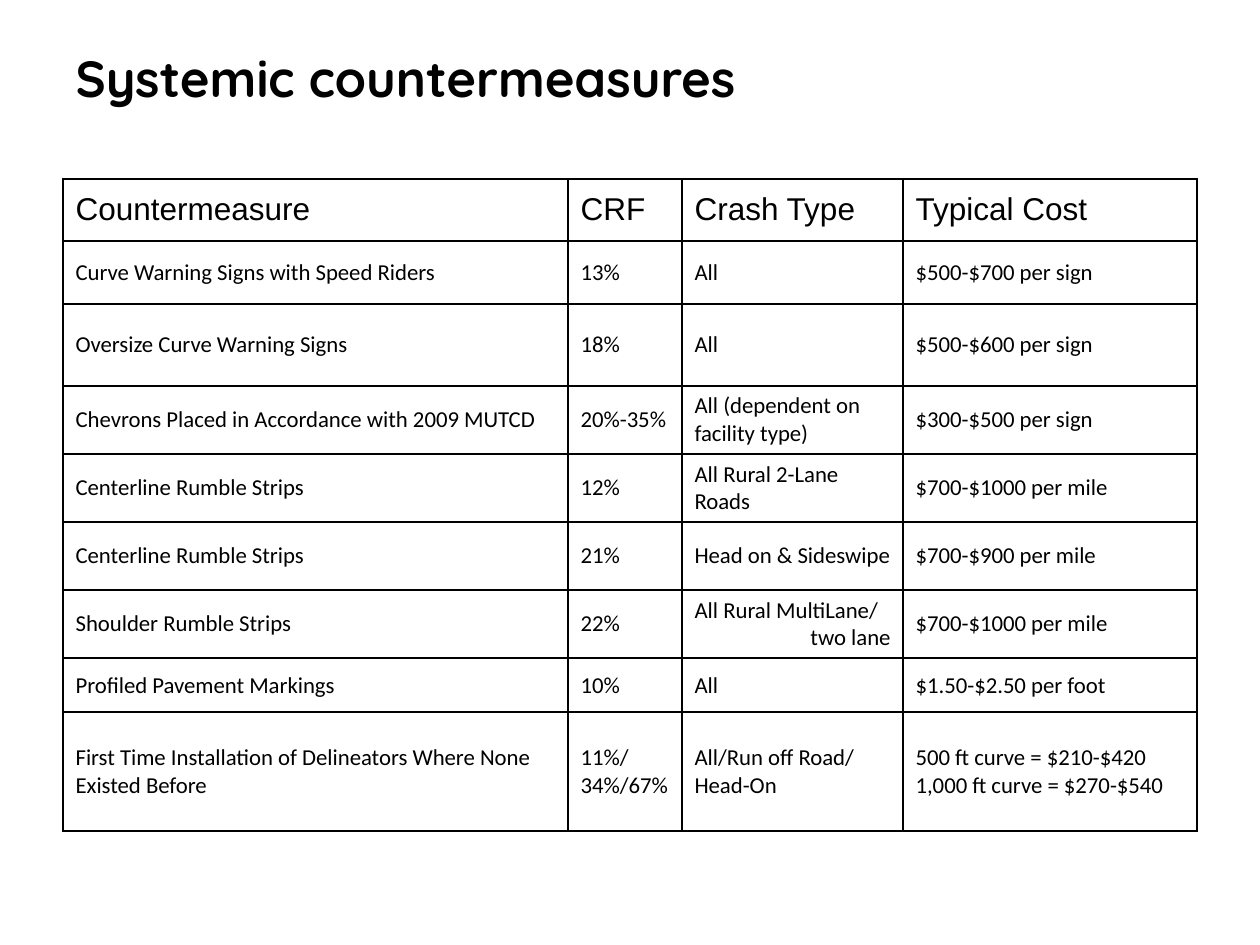
import lxml.etree
import pptx
import pptx.dml.color
import pptx.enum.text
import pptx.oxml.ns
import pptx.util

PIXELS_PER_INCH = 126
BLACK = pptx.dml.color.RGBColor(0, 0, 0)
ANCHOR_MIDDLE = pptx.enum.text.MSO_ANCHOR.MIDDLE
ALIGN = pptx.enum.text.PP_ALIGN

TITLE_FORMAT = {"name": "Quicksand", "size": pptx.util.Pt(29), "bold": True}
HEADER_FORMAT = {"name": "Arial", "size": pptx.util.Pt(18), "bold": False}
BODY_FORMAT = {"name": "Calibri", "size": pptx.util.Pt(13), "bold": False}

TITLE_BOX = (63, 38, 1134, 78)
TABLE_BOX = (63, 179, 1134, 652)
COLUMN_WIDTHS = (505, 114, 221, 294)
ROW_HEIGHTS = (62, 63, 82, 68, 68, 68, 68, 54, 119)
SPLIT_CELL = (6, 2)

COUNTERMEASURES = (
    ("Countermeasure", "CRF", "Crash Type", "Typical Cost"),
    ("Curve Warning Signs with Speed Riders", "13%", "All", "$500-$700 per sign"),
    ("Oversize Curve Warning Signs", "18%", "All", "$500-$600 per sign"),
    ("Chevrons Placed in Accordance with 2009 MUTCD", "20%-35%",
     "All (dependent on facility type)", "$300-$500 per sign"),
    ("Centerline Rumble Strips", "12%", "All Rural 2-Lane Roads", "$700-$1000 per mile"),
    ("Centerline Rumble Strips", "21%", "Head on & Sideswipe", "$700-$900 per mile"),
    ("Shoulder Rumble Strips", "22%", "All Rural MultiLane/\ntwo lane", "$700-$1000 per mile"),
    ("Profiled Pavement Markings", "10%", "All", "$1.50-$2.50 per foot"),
    ("First Time Installation of Delineators Where None Existed Before", "11%/34%/67%",
     "All/Run off Road/ Head-On", "500 ft curve = $210-$420\n1,000 ft curve = $270-$540"),
)


def px(length):
    """Turn a length in pixels into EMU."""
    return pptx.util.Emu(round(length * 914400 / PIXELS_PER_INCH))


def format_text(text_frame, font_format):
    """Apply left alignment, black colour and font values to every paragraph."""
    for paragraph in text_frame.paragraphs:
        paragraph.alignment = ALIGN.LEFT
        for name, value in font_format.items():
            setattr(paragraph.font, name, value)
        paragraph.font.color.rgb = BLACK


def add_borders(cell):
    """Draw a one-point black line on each side of a cell."""
    properties = cell._tc.get_or_add_tcPr()
    for index, side in enumerate(("lnL", "lnR", "lnT", "lnB")):
        line = lxml.etree.Element(
            pptx.oxml.ns.qn(f"a:{side}"), w=str(pptx.util.Pt(1)))
        fill = lxml.etree.SubElement(line, pptx.oxml.ns.qn("a:solidFill"))
        lxml.etree.SubElement(fill, pptx.oxml.ns.qn("a:srgbClr"), val=str(BLACK))
        properties.insert(index, line)


def place_title(slide, box):
    """Fill the title placeholder within the box."""
    title = slide.shapes.title
    title.left, title.top, title.width, title.height = map(px, box)
    title.text_frame.text = "Systemic countermeasures"
    title.text_frame.vertical_anchor = ANCHOR_MIDDLE
    format_text(title.text_frame, TITLE_FORMAT)


def place_table(slide, box):
    """Build the countermeasure table within the box."""
    table = slide.shapes.add_table(
        len(ROW_HEIGHTS), len(COLUMN_WIDTHS), *map(px, box)).table
    table.first_row = table.horz_banding = False
    for column, width in zip(table.columns, COLUMN_WIDTHS):
        column.width = px(width)
    for row_index, values in enumerate(COUNTERMEASURES):
        table.rows[row_index].height = px(ROW_HEIGHTS[row_index])
        for column_index, value in enumerate(values):
            cell = table.cell(row_index, column_index)
            cell.text_frame.text = value
            cell.vertical_anchor = ANCHOR_MIDDLE
            cell.fill.background()
            add_borders(cell)
            format_text(cell.text_frame, BODY_FORMAT if row_index else HEADER_FORMAT)
    table.cell(*SPLIT_CELL).text_frame.paragraphs[1].alignment = ALIGN.RIGHT


def main():
    """Create and save the presentation."""
    presentation = pptx.Presentation()
    presentation.slide_width = px(1260)
    presentation.slide_height = px(945)
    slide = presentation.slides.add_slide(
        presentation.slide_layouts.get_by_name("Title Only"))
    place_title(slide, TITLE_BOX)
    place_table(slide, TABLE_BOX)
    presentation.save("out.pptx")


if __name__ == "__main__":
    main()
